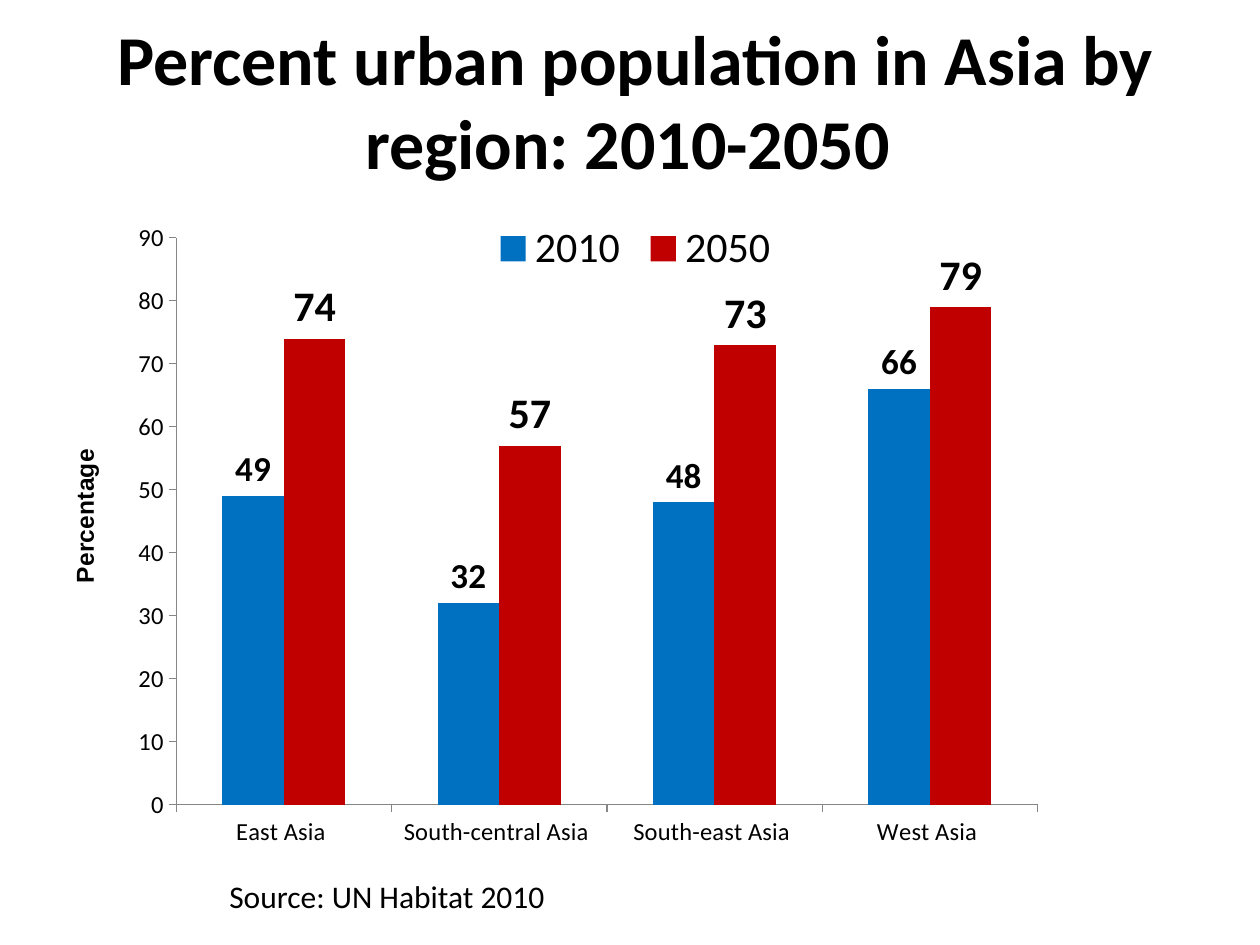
from lxml import etree
from pptx import Presentation
from pptx.chart.data import CategoryChartData
from pptx.dml.color import RGBColor
from pptx.enum.chart import XL_CHART_TYPE, XL_LABEL_POSITION, XL_LEGEND_POSITION, XL_TICK_MARK
from pptx.enum.text import MSO_ANCHOR, PP_ALIGN
from pptx.oxml.ns import qn
from pptx.util import Cm, Pt

BLACK = RGBColor(0x00, 0x00, 0x00)
BLUE = RGBColor(0x00, 0x70, 0xC0)
RED = RGBColor(0xC0, 0x00, 0x00)
GREY = RGBColor(0x86, 0x86, 0x86)
COLUMNS = XL_CHART_TYPE.COLUMN_CLUSTERED
OUTSIDE_END = XL_LABEL_POSITION.OUTSIDE_END
LEGEND_RIGHT = XL_LEGEND_POSITION.RIGHT
TICK_OUTSIDE = XL_TICK_MARK.OUTSIDE
TICK_NONE = XL_TICK_MARK.NONE
MIDDLE = MSO_ANCHOR.MIDDLE
LEFT, CENTER = PP_ALIGN.LEFT, PP_ALIGN.CENTER

REGIONS = ["East Asia ", "South-central Asia ", "South-east Asia ", "West Asia "]
SERIES = [
    ("2010", (49, 32, 48, 66), BLUE, 20),
    ("2050", (74, 57, 73, 79), RED, 24),
]


def set_font(font, size, bold=False, name="Calibri"):
    """Apply size, weight, typeface and black colour to a font."""
    values = {"size": Pt(size), "bold": bold, "name": name}
    for key, value in values.items():
        setattr(font, key, value)
    font.color.rgb = BLACK


def add_text(page, place, text, size, bold=False, align=LEFT, wrap=False):
    """Add a text box with one paragraph."""
    box = page.shapes.add_textbox(*(Cm(length) for length in place))
    frame = box.text_frame
    frame.word_wrap = wrap
    frame.vertical_anchor = MIDDLE
    para = frame.paragraphs[0]
    para.alignment = align
    span = para.add_run()
    span.text = text
    set_font(span.font, size, bold)


def set_layout(element, index, inner=False, **fractions):
    """Place a chart part by fractions of the chart size."""
    for old in element.findall(qn("c:layout")):
        element.remove(old)
    layout = etree.Element(qn("c:layout"))
    manual = etree.SubElement(layout, qn("c:manualLayout"))
    values = {"layoutTarget": "inner"} if inner else {}
    values.update(xMode="edge", yMode="edge", **fractions)
    for key, value in values.items():
        etree.SubElement(manual, qn(f"c:{key}")).set("val", str(value))
    element.insert(index, layout)


def style_axis(axis):
    """Give an axis its ticks, grey line and label font."""
    values = {
        "has_major_gridlines": False,
        "major_tick_mark": TICK_OUTSIDE,
        "minor_tick_mark": TICK_NONE,
    }
    for key, value in values.items():
        setattr(axis, key, value)
    axis.format.line.color.rgb = GREY
    axis.format.line.width = Pt(0.75)
    set_font(axis.tick_labels.font, 14)


def style_series(series, color, label_size):
    """Colour a series and show its values above the columns."""
    series.format.fill.solid()
    series.format.fill.fore_color.rgb = color
    labels = series.data_labels
    labels.show_value = True
    labels.position = OUTSIDE_END
    set_font(labels.font, label_size, True)


def add_axis_title(axis, text):
    """Add an upward-reading axis title."""
    title = axis.axis_title
    para = title.text_frame.paragraphs[0]
    span = para.add_run()
    span.text = text
    set_font(span.font, 14, True, "Arial")
    body = next(title._element.iter(qn("a:bodyPr")))
    body.set("rot", "-5400000")
    body.set("vert", "horz")
    set_layout(title._element, 1, x=0.01, y=0.35)


def add_legend(chart):
    """Add the legend across the top of the plot."""
    chart.has_legend = True
    legend = chart.legend
    legend.position = LEGEND_RIGHT
    legend.include_in_layout = False
    set_font(legend.font, 24)
    set_layout(legend._element, 1, x=0.37, y=0.02, w=0.26, h=0.08)


def add_population_chart(page):
    """Add the clustered column chart of urban population."""
    data = CategoryChartData()
    data.categories = REGIONS
    for name, values, _, _ in SERIES:
        data.add_series(name, values)
    place = (Cm(length) for length in (1.06, 4.23, 23.5, 13.12))
    chart = page.shapes.add_chart(COLUMNS, *place, data).chart
    chart.has_title = False
    set_font(chart.font, 10)
    plot = chart.plots[0]
    plot.gap_width = 150
    plot.overlap = 0
    plot.vary_by_categories = False
    for series, (_, _, color, label_size) in zip(plot.series, SERIES):
        style_series(series, color, label_size)
    for axis in (chart.category_axis, chart.value_axis):
        style_axis(axis)
    chart.value_axis.minimum_scale = 0
    chart.value_axis.maximum_scale = 90
    chart.value_axis.major_unit = 10
    add_axis_title(chart.value_axis, "Percentage ")
    add_legend(chart)
    plot_area = next(chart._chartSpace.iter(qn("c:plotArea")))
    set_layout(plot_area, 0, True, x=0.106, y=0.043, w=0.739, h=0.871)


def main():
    """Build and save the slide."""
    deck = Presentation()
    deck.slide_width, deck.slide_height = Cm(25.4), Cm(19.05)
    page = deck.slides.add_slide(deck.slide_layouts[6])
    add_text(page, (1.06, 0.64, 23.5, 2.75),
             "Percent urban population in Asia by region: 2010-2050 ",
             40, True, CENTER, True)
    add_text(page, (4.23, 17.55, 7.82, 1.03), " Source: UN Habitat 2010", 18)
    add_population_chart(page)
    deck.save("out.pptx")


if __name__ == "__main__":
    main()
